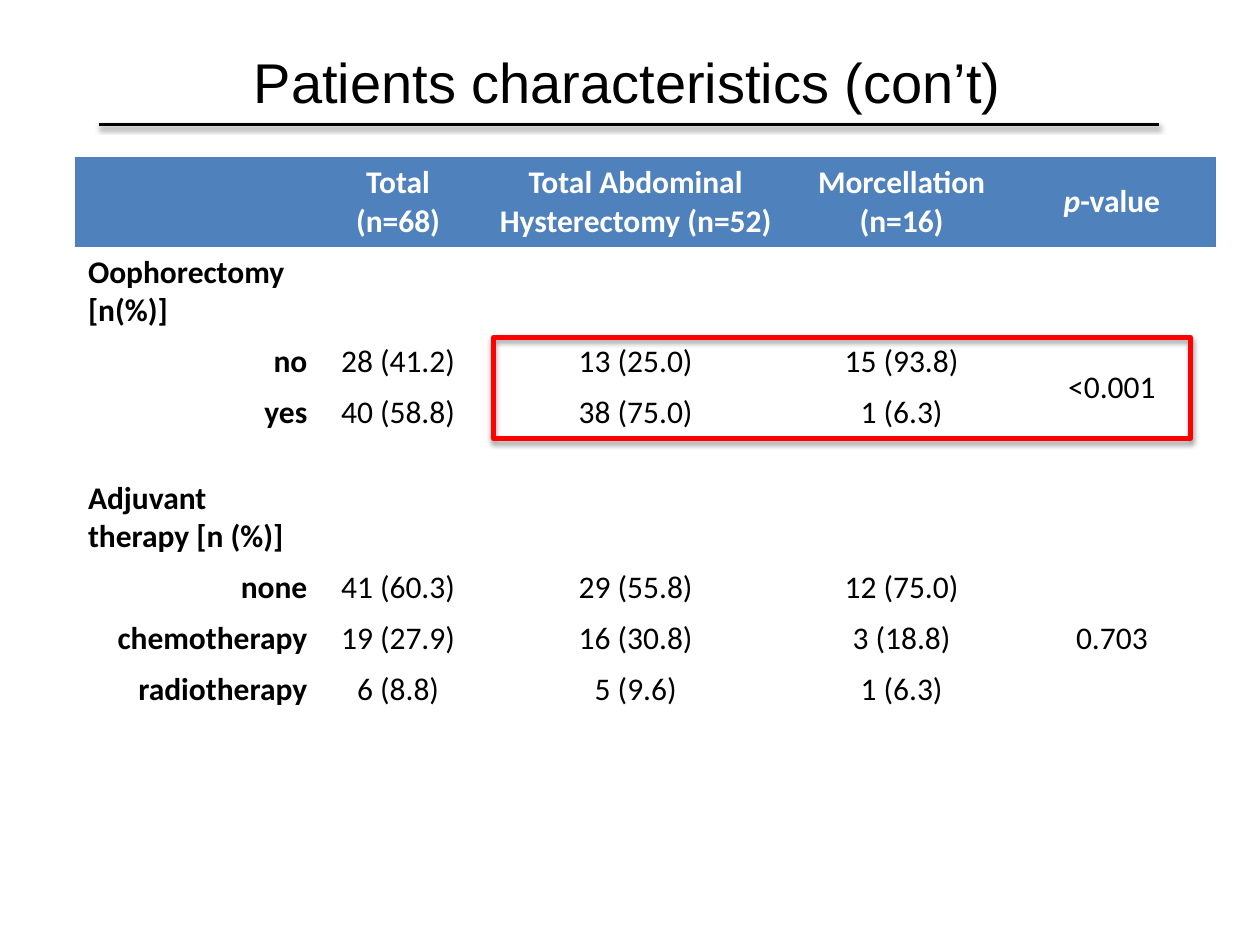
from dataclasses import dataclass

from lxml import etree
from pptx import Presentation
from pptx.dml.color import RGBColor
from pptx.enum import shapes, text
from pptx.oxml import ns
from pptx.util import Cm, Pt

BLACK = RGBColor(0x00, 0x00, 0x00)
WHITE = RGBColor(0xFF, 0xFF, 0xFF)
RED = RGBColor(0xFF, 0x00, 0x00)
HEADER_BLUE = RGBColor(0x4F, 0x81, 0xBD)
HEADER_EDGE = RGBColor(0x4B, 0x7E, 0xBC)

LEFT, CENTER, RIGHT = text.PP_ALIGN.LEFT, text.PP_ALIGN.CENTER, text.PP_ALIGN.RIGHT
PLAIN_TABLE = "{2D5ABB26-0587-4C30-8999-92F81FD0307C}"
TALL, SINGLE, GAP = 1.79, 1.03, 0.69
COLUMN_WIDTHS = (4.93, 3.15, 6.43, 4.29, 4.19)


@dataclass
class Row:
    label: str = ""
    values: tuple = ("", "", "", "")
    height: float = SINGLE
    label_align: text.PP_ALIGN = RIGHT
    is_header: bool = False


ROWS = (
    Row("", ("Total (n=68)", "Total Abdominal Hysterectomy (n=52)",
             "Morcellation (n=16)", "-value"), TALL, is_header=True),
    Row("Oophorectomy [n(%)]", height=TALL, label_align=LEFT),
    Row("no", ("28 (41.2)", "13 (25.0)", "15 (93.8)", "<0.001")),
    Row("yes", ("40 (58.8)", "38 (75.0)", "1 (6.3)", "")),
    Row(height=GAP),
    Row("Adjuvant therapy [n (%)]", height=TALL, label_align=LEFT),
    Row("none", ("41 (60.3)", "29 (55.8)", "12 (75.0)", "")),
    Row("chemotherapy", ("19 (27.9)", "16 (30.8)", "3 (18.8)", "0.703")),
    Row("radiotherapy", ("6 (8.8)", "5 (9.6)", "1 (6.3)", "")),
)


def write(frame, content: str, *, size: float = 18, font: str = "Calibri",
          color: RGBColor = BLACK, bold: bool = False,
          align: text.PP_ALIGN = CENTER, italic_head: str = ""):
    paragraph = frame.paragraphs[0]
    paragraph.alignment = align
    for part, italic in ((italic_head, True), (content, False)):
        if part:
            run = paragraph.add_run()
            run.text = part
            run.font.size = Pt(size)
            run.font.name = font
            run.font.color.rgb = color
            run.font.bold = bold
            run.font.italic = italic
    return paragraph


def cast_shadow(shape, opacity: int, distance: float) -> None:
    effects = etree.SubElement(shape.element.spPr, ns.qn("a:effectLst"))
    shadow = etree.SubElement(
        effects, ns.qn("a:outerShdw"), blurRad=str(Pt(3.1)),
        dist=str(Pt(distance)), dir="5400000", rotWithShape="0")
    color = etree.SubElement(shadow, ns.qn("a:srgbClr"), val=str(BLACK))
    etree.SubElement(color, ns.qn("a:alpha"), val=str(opacity * 1000))


def add_edge(cell, side: str, position: int) -> None:
    edge = etree.Element(ns.qn(f"a:ln{side}"), w=str(Pt(0.75)))
    fill = etree.SubElement(edge, ns.qn("a:solidFill"))
    etree.SubElement(fill, ns.qn("a:srgbClr"), val=str(HEADER_EDGE))
    cell._tc.get_or_add_tcPr().insert(position, edge)


def format_header(cell, column: int) -> None:
    cell.fill.solid()
    cell.fill.fore_color.rgb = HEADER_BLUE
    sides = ["T"]
    if column == 0:
        sides.insert(0, "L")
    if column == len(COLUMN_WIDTHS) - 1:
        sides.insert(0, "R")
    for position, side in enumerate(sides):
        add_edge(cell, side, position)


def add_title(slide) -> None:
    title = slide.shapes.title
    title.left, title.top, title.width, title.height = Cm(0.74), Cm(1.07), Cm(23.83), Cm(1.4)
    title.text_frame.auto_size = text.MSO_AUTO_SIZE.NONE
    title.text_frame.vertical_anchor = text.MSO_ANCHOR.MIDDLE
    heading = write(title.text_frame, "Patients characteristics (con’t)", size=32, font="Arial")
    heading.line_spacing = 0.8
    rule = slide.shapes.add_connector(
        shapes.MSO_CONNECTOR.STRAIGHT, Cm(2), Cm(2.51), Cm(23.37), Cm(2.51))
    rule.line.color.rgb = BLACK
    rule.line.width = Pt(2)
    cast_shadow(rule, 38, 1.6)


def add_characteristics(slide) -> None:
    table = slide.shapes.add_table(
        len(ROWS), len(COLUMN_WIDTHS), Cm(1.52), Cm(3.17),
        Cm(sum(COLUMN_WIDTHS)), Cm(sum(row.height for row in ROWS))).table
    table.horz_banding = False
    table._tbl.tblPr.find(ns.qn("a:tableStyleId")).text = PLAIN_TABLE
    for column, width in zip(table.columns, COLUMN_WIDTHS):
        column.width = Cm(width)
    for r, row in enumerate(ROWS):
        table.rows[r].height = Cm(row.height)
        for c, content in enumerate((row.label, *row.values)):
            cell = table.cell(r, c)
            cell.vertical_anchor = text.MSO_ANCHOR.MIDDLE
            paragraph = write(
                cell.text_frame, content,
                color=WHITE if row.is_header else BLACK,
                bold=row.is_header or c == 0,
                align=row.label_align if c == 0 else CENTER,
                italic_head="p" if content == "-value" else "")
            if row.height == GAP:
                etree.SubElement(paragraph._p, ns.qn("a:endParaRPr"), sz="1000")
            if row.is_header:
                format_header(cell, c)
            else:
                cell.fill.background()
    table.cell(2, 4).merge(table.cell(3, 4))


def add_highlight(slide) -> None:
    highlight = slide.shapes.add_shape(
        shapes.MSO_SHAPE.RECTANGLE, Cm(9.95), Cm(6.81), Cm(14.05), Cm(2.03))
    highlight.fill.background()
    highlight.line.color.rgb = RED
    highlight.line.width = Pt(3)
    cast_shadow(highlight, 35, 1.8)


def main() -> None:
    deck = Presentation()
    deck.slide_width, deck.slide_height = Cm(25.4), Cm(19.05)
    slide = deck.slides.add_slide(deck.slide_layouts[5])
    add_title(slide)
    add_characteristics(slide)
    add_highlight(slide)
    deck.save("out.pptx")


if __name__ == "__main__":
    main()
